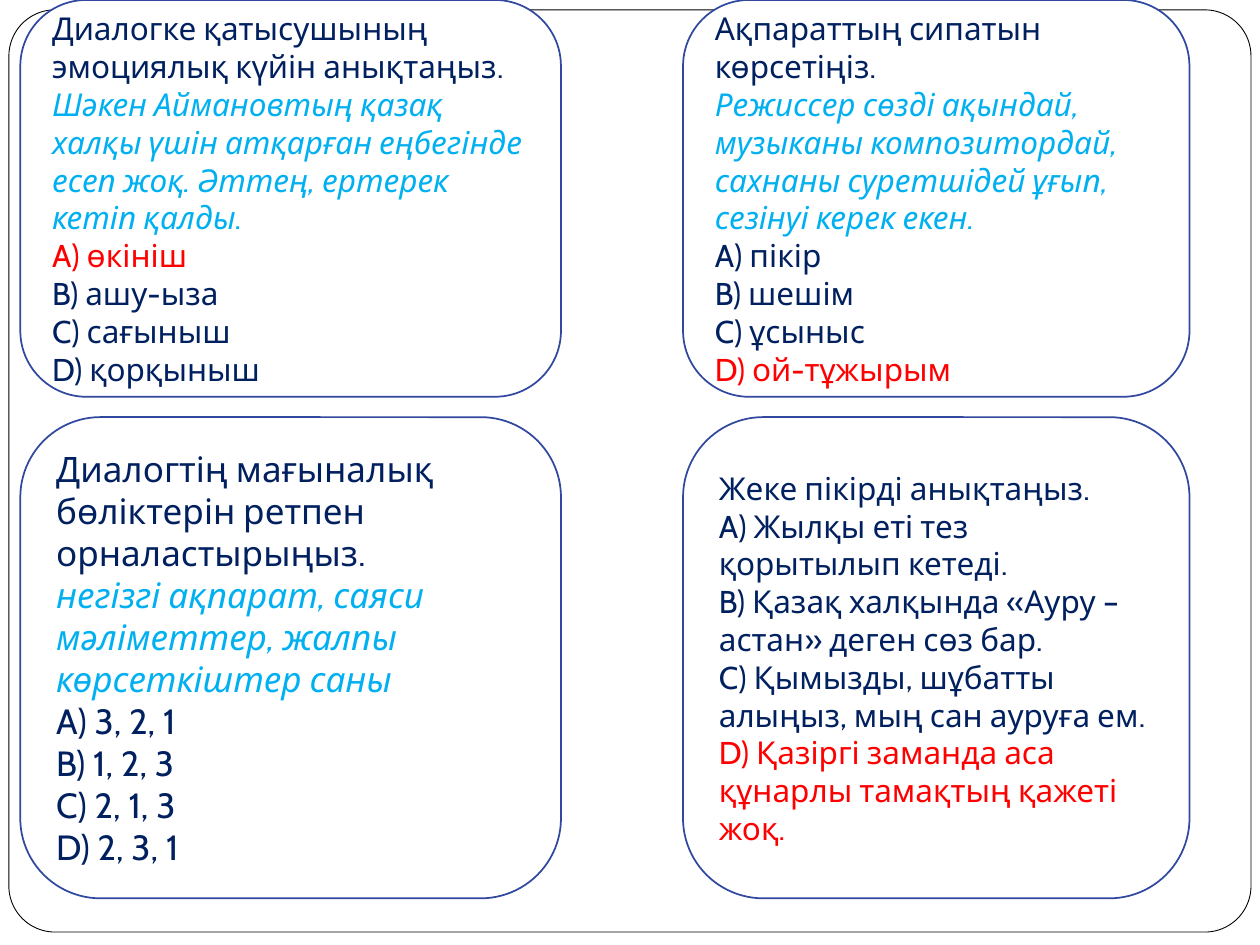
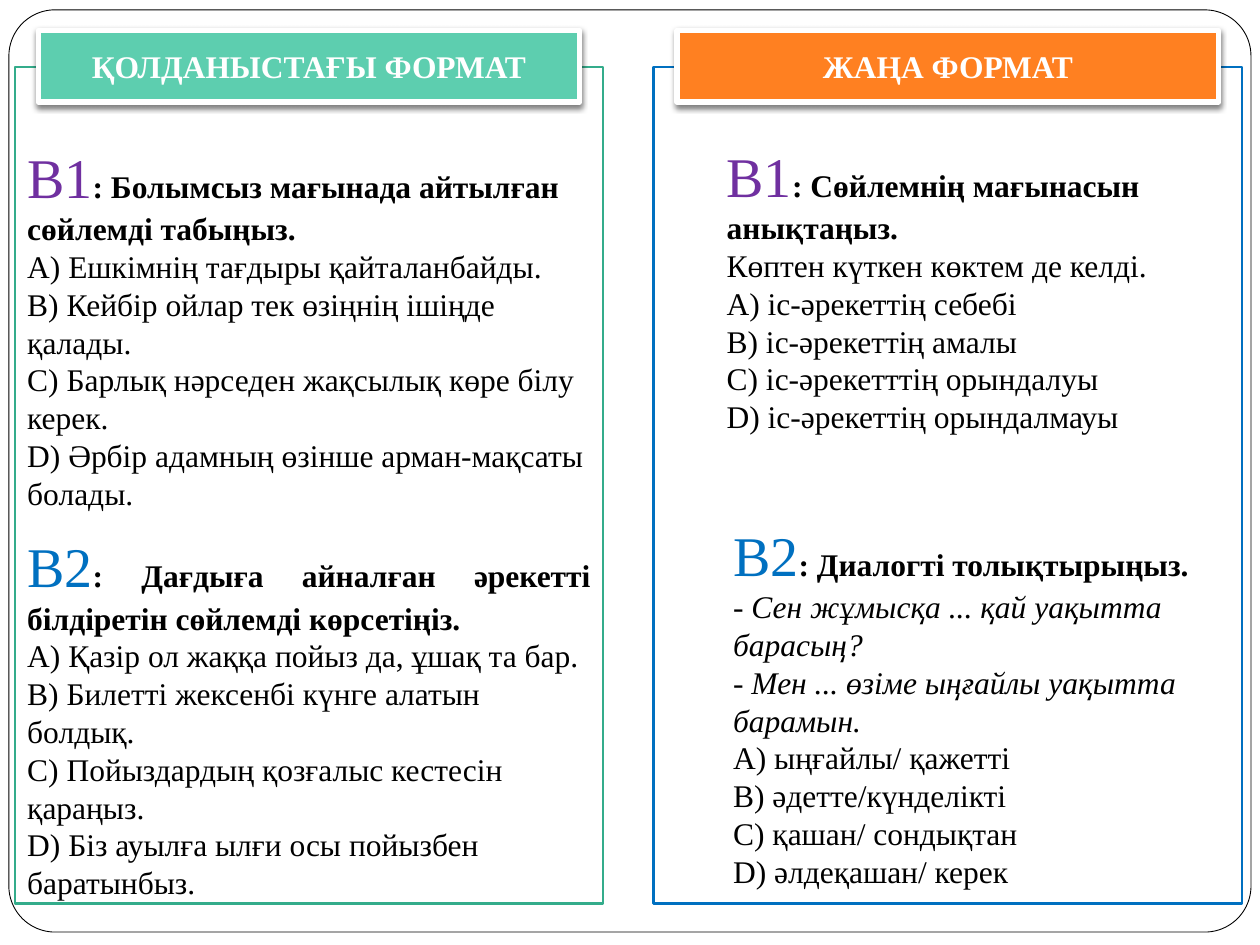
from lxml.etree import SubElement
from pptx import Presentation
from pptx.dml.color import RGBColor
from pptx.enum.shapes import MSO_SHAPE
from pptx.enum.text import MSO_ANCHOR, MSO_AUTO_SIZE, PP_ALIGN
from pptx.oxml.ns import qn
from pptx.util import Cm, Pt

WHITE, BLACK, RED = "FFFFFF", "000000", "FF0000"
NAVY, SKY, CARD_LINE = "002060", "00B0F0", "31489F"
PURPLE, BLUE, GREEN, MINT, ORANGE = "7030A0", "0070C0", "34AC8B", "5DCEAF", "FF8021"
CARD_FONT, FORMAT_FONT = "Cabin", "Times New Roman"

# Kinds of line on the question cards: colour, italic
QUESTION = OPTION = (NAVY, False)
QUOTE = (SKY, True)
ANSWER = (RED, False)

CARD_COLUMNS = [(0.41, 10.9), (13.77, 10.21)]
CARD_ROWS = [(0, 8), (8.41, 9.7)]
# One card an entry, row by row: text size, lines
CARDS = [
    (18, [
        ("Диалогке қатысушының эмоциялық күйін анықтаңыз.", QUESTION),
        ("Шәкен Аймановтың қазақ халқы үшін атқарған еңбегінде есеп жоқ. "
         "Әттең, ертерек кетіп қалды.", QUOTE),
        ("A) өкініш", ANSWER),
        ("B) ашу-ыза", OPTION),
        ("C) сағыныш", OPTION),
        ("D) қорқыныш", OPTION),
    ]),
    (18, [
        ("Ақпараттың сипатын көрсетіңіз.", QUESTION),
        ("Режиссер сөзді ақындай, музыканы композитордай, сахнаны суретшідей "
         "ұғып, сезінуі керек екен.", QUOTE),
        ("A) пікір", OPTION),
        ("B) шешім", OPTION),
        ("C) ұсыныс", OPTION),
        ("D) ой-тұжырым", ANSWER),
    ]),
    (20, [
        ("Диалогтің мағыналық бөліктерін ретпен орналастырыңыз.", QUESTION),
        ("негізгі ақпарат, саяси мәліметтер, жалпы көрсеткіштер саны", QUOTE),
        ("A) 3, 2, 1", OPTION),
        ("B) 1, 2, 3", OPTION),
        ("C) 2, 1, 3", OPTION),
        ("D) 2, 3, 1", OPTION),
    ]),
    (18, [
        ("Жеке пікірді анықтаңыз.", QUESTION),
        ("A) Жылқы еті тез қорытылып кетеді.", OPTION),
        ("B) Қазақ халқында «Ауру – астан» деген сөз бар.", OPTION),
        ("C) Қымызды, шұбатты алыңыз, мың сан ауруға ем.", OPTION),
        ("D) Қазіргі заманда аса құнарлы тамақтың қажеті жоқ.", ANSWER),
    ]),
]

# Place, label, label colour, heading alignment, heading, italic lines, plain lines
TASKS = [
    ((0.3, 2.74, 11.86, 7.77), "В1", PURPLE, PP_ALIGN.LEFT,
     ": Болымсыз мағынада айтылған сөйлемді табыңыз.", [],
     ["A) Ешкімнің тағдыры қайталанбайды.",
      "B) Кейбір ойлар тек өзіңнің ішіңде қалады.",
      "C) Барлық нәрседен жақсылық көре білу керек.",
      "D) Әрбір адамның өзінше арман-мақсаты болады."]),
    ((14.4, 2.72, 9.96, 6.25), "В1", PURPLE, PP_ALIGN.LEFT,
     ": Сөйлемнің мағынасын анықтаңыз.", [],
     ["Көптен күткен көктем де келді.",
      "А) іс-әрекеттің себебі",
      "В) іс-әрекеттің амалы",
      "С) іс-әрекетттің орындалуы",
      "D) іс-әрекеттің орындалмауы"]),
    ((0.3, 10.59, 11.86, 7.77), "В2", BLUE, PP_ALIGN.JUSTIFY,
     ": Дағдыға айналған әрекетті білдіретін сөйлемді көрсетіңіз.", [],
     ["A) Қазір ол жаққа пойыз да, ұшақ та бар.",
      "B) Билетті жексенбі күнге алатын болдық.",
      "C) Пойыздардың қозғалыс кестесін қараңыз.",
      "D) Біз ауылға ылғи осы пойызбен баратынбыз."]),
    ((14.53, 10.36, 9.96, 7.77), "В2", BLUE, PP_ALIGN.JUSTIFY,
     ": Диалогті толықтырыңыз.",
     ["- Сен жұмысқа ... қай уақытта барасың?",
      "- Мен ... өзіме ыңғайлы уақытта барамын."],
     ["A) ыңғайлы/ қажетті",
      "B) әдетте/күнделікті",
      "C) қашан/ сондықтан",
      "D) әлдеқашан/ керек"]),
]

# Left edge, frame colour, banner colour, banner title
PANELS = [
    (0.3, GREEN, MINT, "ҚОЛДАНЫСТАҒЫ ФОРМАТ"),
    (13.18, BLUE, ORANGE, "ЖАҢА ФОРМАТ"),
]


def rgb(hex_colour):
    return RGBColor.from_string(hex_colour)


def style_font(font, name, size, colour, bold=False, italic=False):
    font.name = name
    font.size = Pt(size)
    font.color.rgb = rgb(colour)
    font.bold = bold
    font.italic = italic


def add_box(slide, kind, place, fill, line, line_width):
    """Add a preset shape at place in cm; a fill of None leaves it open."""
    shape = slide.shapes.add_shape(kind, *map(Cm, place))
    shape.shadow.inherit = False
    if fill:
        shape.fill.solid()
        shape.fill.fore_color.rgb = rgb(fill)
    else:
        shape.fill.background()
    shape.line.color.rgb = rgb(line)
    shape.line.width = Pt(line_width)
    return shape


def add_drop_shadow(shape):
    effects = shape._element.spPr.find(qn("a:effectLst"))
    shadow = SubElement(effects, qn("a:outerShdw"), blurRad=str(Pt(3)),
                        dist=str(Pt(2)), dir="5400000", rotWithShape="0")
    colour = SubElement(shadow, qn("a:srgbClr"), val=BLACK)
    SubElement(colour, qn("a:alpha"), val="50000")


def next_paragraph(text_frame):
    """Return the empty first paragraph, or a new one after the last."""
    first = text_frame.paragraphs[0]
    return text_frame.add_paragraph() if first.runs else first


def add_line(text_frame, text, name, size, colour, bold=False, italic=False,
             alignment=PP_ALIGN.LEFT):
    paragraph = next_paragraph(text_frame)
    paragraph.alignment = alignment
    paragraph.add_run().text = text
    style_font(paragraph.font, name, size, colour, bold, italic)


def add_framed_slide(presentation):
    """Add a blank slide with the thin rounded border that all slides share."""
    slide = presentation.slides.add_slide(presentation.slide_layouts[6])
    border = add_box(slide, MSO_SHAPE.ROUNDED_RECTANGLE, (0.18, 0.2, 25.04, 18.59),
                     WHITE, BLACK, 0.5)
    border.adjustments[0] = 0.05
    return slide


def add_card(slide, place, size, lines):
    card = add_box(slide, MSO_SHAPE.ROUNDED_RECTANGLE, place, WHITE, CARD_LINE, 1)
    text_frame = card.text_frame
    text_frame.word_wrap = True
    text_frame.vertical_anchor = MSO_ANCHOR.MIDDLE
    for text, (colour, italic) in lines:
        add_line(text_frame, text, CARD_FONT, size, colour, italic=italic)


def add_task(slide, place, label, label_colour, alignment, heading,
             italic_lines, plain_lines):
    text_frame = slide.shapes.add_textbox(*map(Cm, place)).text_frame
    text_frame.word_wrap = True
    text_frame.auto_size = MSO_AUTO_SIZE.SHAPE_TO_FIT_TEXT
    paragraph = next_paragraph(text_frame)
    paragraph.alignment = alignment
    for text, size, colour, bold in ((label, 32, label_colour, False),
                                     (heading, 18, BLACK, True)):
        run = paragraph.add_run()
        run.text = text
        style_font(run.font, FORMAT_FONT, size, colour, bold)
    for lines, italic in ((italic_lines, True), (plain_lines, False)):
        for text in lines:
            add_line(text_frame, text, FORMAT_FONT, 18, BLACK, italic=italic)


def add_panel(slide, left, frame_colour, banner_colour, title):
    """Add an open frame with a titled banner over its top edge."""
    add_box(slide, MSO_SHAPE.RECTANGLE, (left, 1.35, 11.86, 16.87),
            None, frame_colour, 1.5)
    banner = add_box(slide, MSO_SHAPE.RECTANGLE, (left + 0.47, 0.61, 10.92, 1.45),
                     banner_colour, WHITE, 3)
    add_drop_shadow(banner)
    banner.text_frame.word_wrap = True
    banner.text_frame.vertical_anchor = MSO_ANCHOR.MIDDLE
    add_line(banner.text_frame, title, FORMAT_FONT, 18, WHITE, bold=True,
             alignment=PP_ALIGN.CENTER)


def main():
    presentation = Presentation()
    presentation.slide_width = Cm(25.4)
    presentation.slide_height = Cm(19.05)

    question_slide = add_framed_slide(presentation)
    for index, (size, lines) in enumerate(CARDS):
        row, column = divmod(index, len(CARD_COLUMNS))
        left, width = CARD_COLUMNS[column]
        top, height = CARD_ROWS[row]
        add_card(question_slide, (left, top, width, height), size, lines)

    format_slide = add_framed_slide(presentation)
    for task in TASKS:
        add_task(format_slide, *task)
    for panel in PANELS:
        add_panel(format_slide, *panel)

    presentation.save("out.pptx")


if __name__ == "__main__":
    main()
